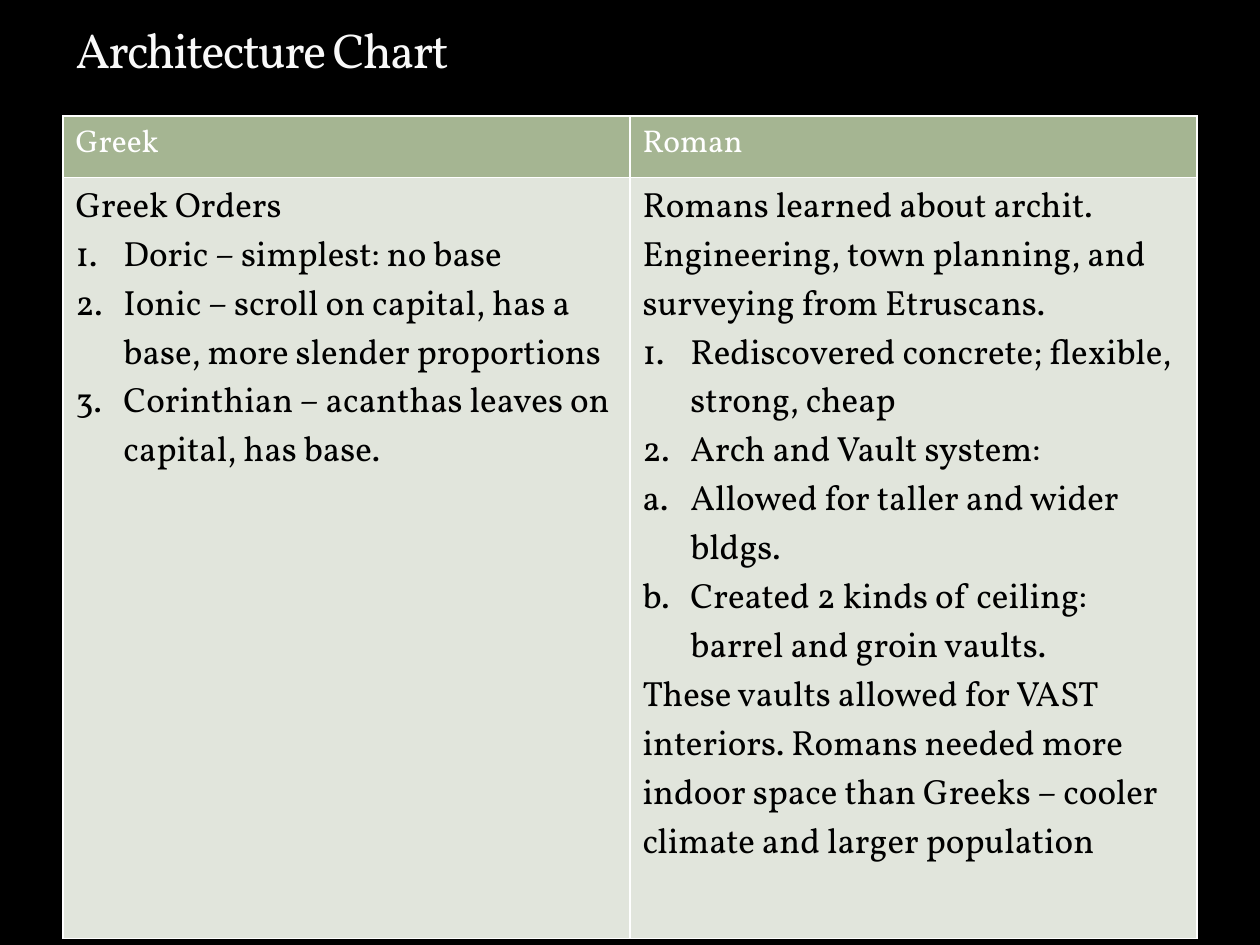
from lxml import etree
from pptx import Presentation
from pptx.dml.color import RGBColor
from pptx.enum.text import MSO_ANCHOR, PP_ALIGN
from pptx.oxml.ns import qn
from pptx.util import Inches, Pt

BOTTOM, LEFT = MSO_ANCHOR.BOTTOM, PP_ALIGN.LEFT
FONT = "Vollkorn"
NUMBER, LETTER = "arabicPeriod", "alphaLcPeriod"
TITLE = "Architecture Chart"
HEADERS = ["Greek", "Roman"]
BODIES = [
    [
        ("Greek Orders", None),
        ("Doric – simplest: no base", NUMBER),
        ("Ionic – scroll on capital, has a base, more slender proportions", NUMBER),
        ("Corinthian – acanthas leaves on capital, has base.", NUMBER),
    ],
    [
        ("Romans learned about archit. Engineering, town planning, and "
         "surveying from Etruscans.", None),
        ("Rediscovered concrete; flexible, strong, cheap", NUMBER),
        ("Arch and Vault system:", NUMBER),
        ("Allowed for taller and wider bldgs.", LETTER),
        ("Created 2 kinds of ceiling: barrel and groin vaults.", LETTER),
        ("These vaults allowed for VAST interiors. Romans needed more indoor "
         "space than Greeks – cooler climate and larger population", None),
    ],
]
ROWS = [
    (0.49, "A5B592", "FFFFFF", 18, [[(header, None)] for header in HEADERS]),
    (6.04, "E1E5DC", "000000", 20, BODIES),
]


def rgb(value):
    return RGBColor.from_string(value)


def add_run(p, text, size, color):
    r = p.add_run()
    r.text = text
    r.font.name, r.font.size, r.font.bold = FONT, Pt(size), False
    r.font.color.rgb = rgb(color)
    return r


def add_numbering(p, scheme):
    pPr = p._p.get_or_add_pPr()
    pPr.set("marL", str(Inches(0.38)))
    pPr.set("indent", str(-Inches(0.38)))
    etree.SubElement(pPr, qn("a:buFont"), typeface="+mj-lt")
    etree.SubElement(pPr, qn("a:buAutoNum"), type=scheme)


def add_borders(cell, color, width):
    tcPr = cell._tc.get_or_add_tcPr()
    for i, side in enumerate("LRTB"):
        ln = etree.Element(qn(f"a:ln{side}"), w=str(Pt(width)))
        fill = etree.SubElement(ln, qn("a:solidFill"))
        etree.SubElement(fill, qn("a:srgbClr"), val=color)
        tcPr.insert(i, ln)


def fill_cell(cell, paragraphs, fill, color, size):
    cell.fill.solid()
    cell.fill.fore_color.rgb = rgb(fill)
    add_borders(cell, "FFFFFF", 1)
    tf = cell.text_frame
    for i, (text, scheme) in enumerate(paragraphs):
        p = tf.add_paragraph() if i else tf.paragraphs[0]
        if scheme:
            add_numbering(p, scheme)
        add_run(p, text, size, color)


def add_title(s):
    sp = s.shapes.title
    sp.left, sp.top = Inches(0.5), Inches(0)
    sp.width, sp.height = Inches(9), Inches(0.67)
    tf = sp.text_frame
    tf.vertical_anchor = BOTTOM
    p = tf.paragraphs[0]
    p.alignment = LEFT
    r = add_run(p, TITLE, 28, "F9F9F9")
    r.font._element.set("spc", "-100")


def add_comparison(s):
    height = sum(row[0] for row in ROWS)
    table = s.shapes.add_table(len(ROWS), len(HEADERS), Inches(0.5), Inches(0.92),
                               Inches(9), Inches(height)).table
    table.horz_banding = False
    for i, (height, fill, color, size, cells) in enumerate(ROWS):
        table.rows[i].height = Inches(height)
        for j, paragraphs in enumerate(cells):
            fill_cell(table.cell(i, j), paragraphs, fill, color, size)


def main():
    """Build the slide comparing Greek and Roman architecture."""
    prs = Presentation()
    prs.slide_width, prs.slide_height = Inches(10), Inches(7.5)
    s = prs.slides.add_slide(prs.slide_layouts[5])
    s.background.fill.solid()
    s.background.fill.fore_color.rgb = rgb("000000")
    add_comparison(s)
    add_title(s)
    prs.save("out.pptx")


if __name__ == "__main__":
    main()
